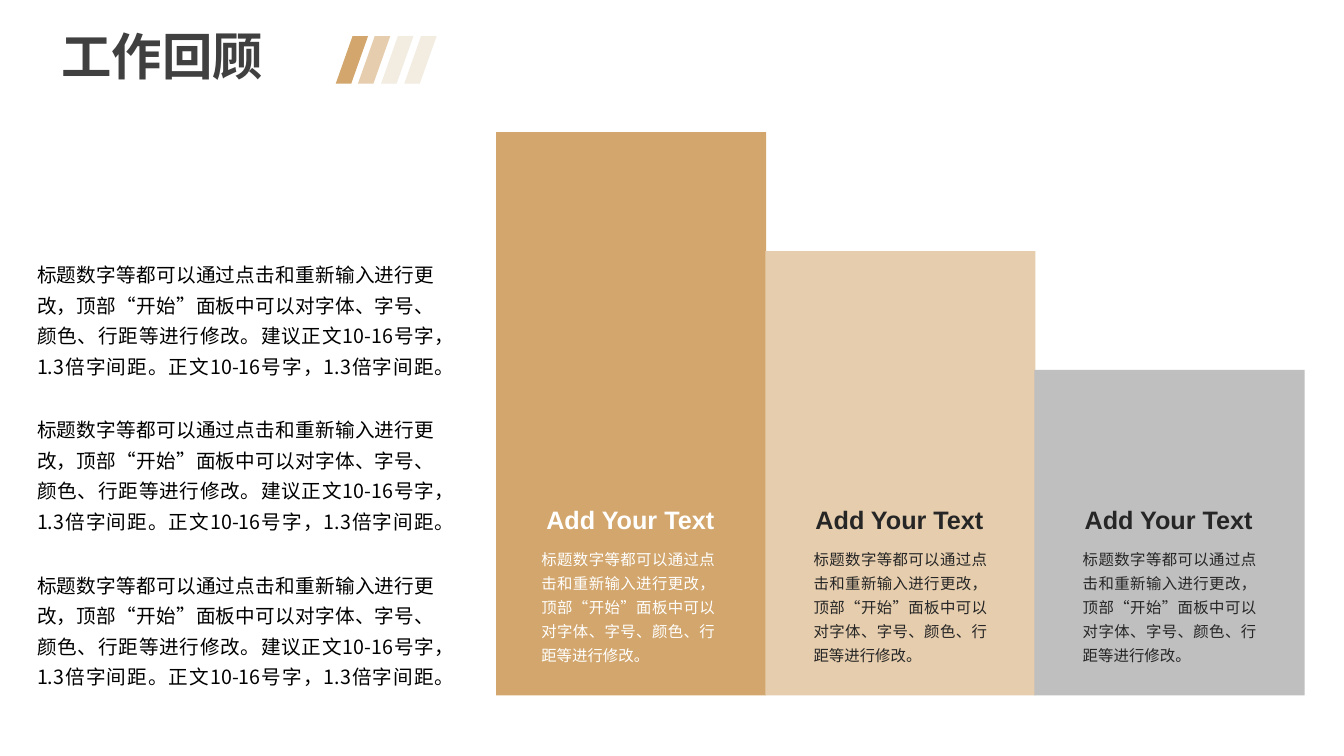
"""Build the work review slide with three descending columns."""
from pptx import Presentation
from pptx import util as u
from pptx.dml.color import RGBColor
from pptx.enum import shapes, text
from pptx.oxml.ns import qn
from lxml import etree

PX = 9144
GOLD = RGBColor(0xD2, 0xA6, 0x6C)
SAND = RGBColor(0xE6, 0xCD, 0xAD)
CREAM = RGBColor(0xF2, 0xEC, 0xE1)
SILVER = RGBColor(0xBF, 0xBF, 0xBF)
WHITE = RGBColor(0xFF, 0xFF, 0xFF)
BLACK = RGBColor(0x00, 0x00, 0x00)
INK = RGBColor(0x26, 0x26, 0x26)
TITLE_GREY = RGBColor(0x40, 0x40, 0x40)
LATIN_FONT = "Arial"
CHINESE_FONT = "Noto Sans CJK SC"

COLUMN_TEXT = ("标题数字等都可以通过点击和重新输入进行更改，顶部“开始”面板中"
               "可以对字体、字号、颜色、行距等进行修改。")
REVIEW_TEXT = COLUMN_TEXT + "建议正文10-16号字，1.3倍字间距。正文10-16号字，1.3倍字间距。"
COLUMN_LEFT, COLUMN_TOP, COLUMN_BOTTOM = 492, 131, 690
COLUMN_WIDTH, COLUMN_PITCH, COLUMN_DROP = 268, 267, 118


def px(*lengths):
    """Turn pixel lengths into EMU."""
    return [u.Emu(length * PX) for length in lengths]


def add_block(slide, kind, box, fill):
    """Add a flat filled shape without outline."""
    shape = slide.shapes.add_shape(kind, *px(*box))
    shape.shadow.inherit = False
    shape.fill.solid()
    shape.fill.fore_color.rgb = fill
    shape.line.fill.background()
    return shape


def add_text(slide, box, words, size, color, font=CHINESE_FONT, bold=False, wrap=True):
    """Add a one-paragraph text box and return its paragraph."""
    frame = slide.shapes.add_textbox(*px(*box)).text_frame
    frame.word_wrap = wrap
    frame.auto_size = text.MSO_AUTO_SIZE.SHAPE_TO_FIT_TEXT
    paragraph = frame.paragraphs[0]
    paragraph.text = words
    run = paragraph.runs[0]
    run.font.name = font
    run.font.size = u.Pt(size)
    run.font.bold = bold
    run.font.color.rgb = color
    east_asian = etree.SubElement(run.font._element, qn("a:ea"))
    east_asian.set("typeface", CHINESE_FONT)
    return paragraph


def add_body(slide, box, words, size, color):
    """Add a justified paragraph with 1.3 line spacing."""
    paragraph = add_text(slide, box, words, size, color)
    paragraph.alignment = text.PP_ALIGN.JUSTIFY
    paragraph.line_spacing = 1.3


def add_title(slide):
    """Add the slide title and its row of slanted bars."""
    for index, color in enumerate((GOLD, SAND, CREAM, CREAM)):
        box = (333 + round(22.5 * index), 36, 32, 47)
        bar = add_block(slide, shapes.MSO_SHAPE.PARALLELOGRAM, box, color)
        bar.adjustments[0] = 0.52
    paragraph = add_text(slide, (51, 27, 294, 65), "工作回顾", 36, TITLE_GREY,
                         LATIN_FONT, bold=True)
    paragraph.line_spacing = 0.9
    paragraph.space_before = u.Pt(10)


def add_column(slide, index, fill, color, heading_width, body_inset):
    """Add one step of the descending columns with its heading and body."""
    left = COLUMN_LEFT + index * COLUMN_PITCH
    top = COLUMN_TOP + index * COLUMN_DROP
    add_block(slide, shapes.MSO_SHAPE.RECTANGLE,
              (left, top, COLUMN_WIDTH, COLUMN_BOTTOM - top), fill)
    add_text(slide, (left + 40, 495, heading_width, 40), "Add Your Text", 18, color,
             LATIN_FONT, bold=True, wrap=False)
    add_body(slide, (left + body_inset, 535, 192, 130), COLUMN_TEXT, 11, color)


def main():
    """Build and save the slide."""
    presentation = Presentation()
    presentation.slide_width, presentation.slide_height = px(1333, 750)
    slide = presentation.slides.add_slide(presentation.slide_layouts[6])
    add_title(slide)
    for index in range(3):
        add_body(slide, (27, 249 + 154 * index, 414, 133), REVIEW_TEXT, 14, BLACK)
    columns = ((GOLD, WHITE, 188, 35), (SAND, INK, 193, 38), (SILVER, INK, 193, 38))
    for index, column in enumerate(columns):
        add_column(slide, index, *column)
    presentation.save("out.pptx")


if __name__ == "__main__":
    main()
